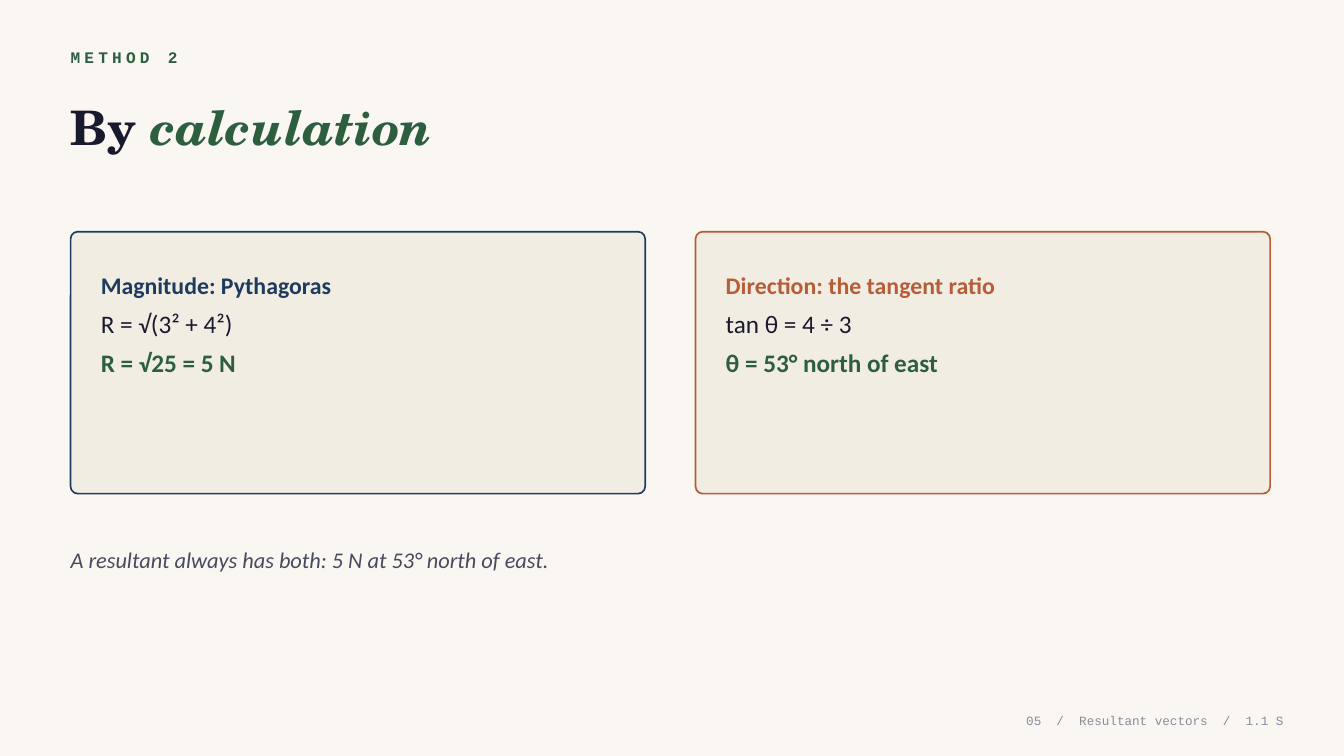
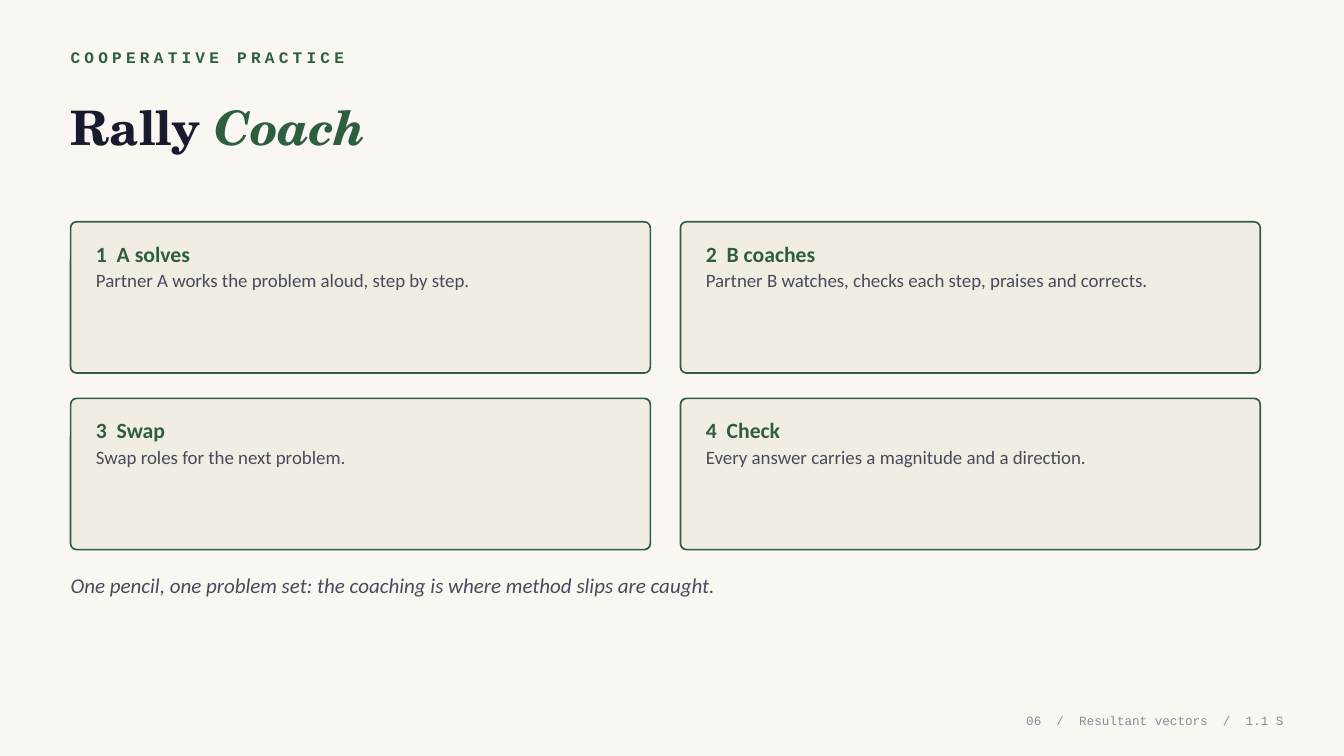
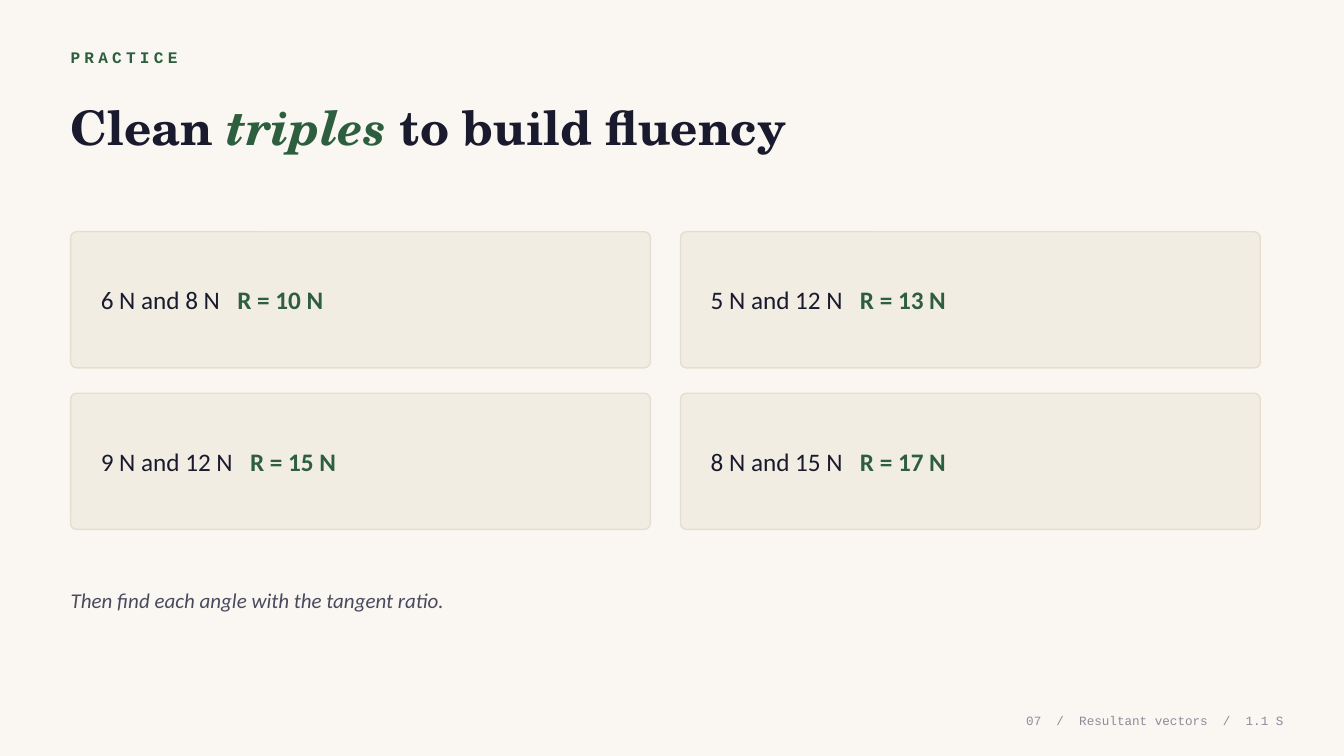
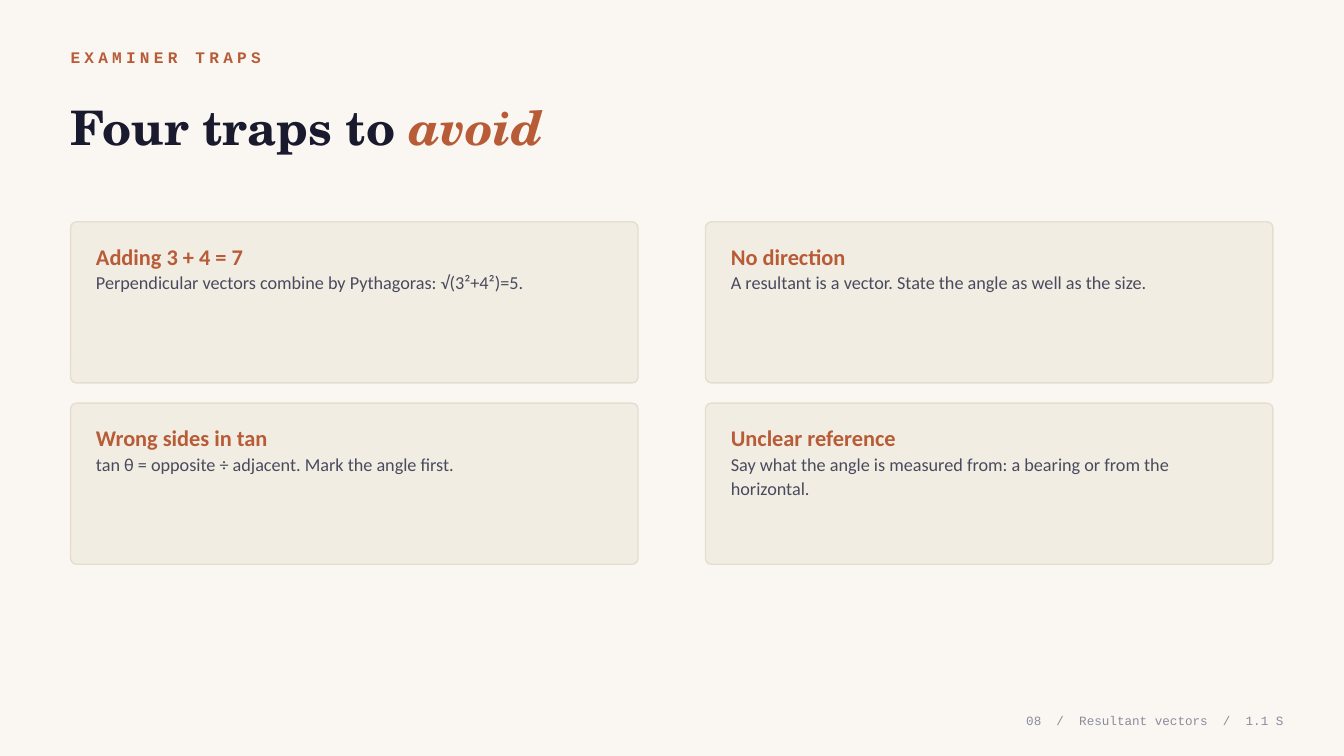
import dataclasses

import pptx
import pptx.dml.color
import pptx.enum.shapes
import pptx.enum.text
import pptx.presentation
import pptx.shapes.autoshape
import pptx.slide
import pptx.text.text
import pptx.util

Cm = pptx.util.Cm
Pt = pptx.util.Pt
Anchor = pptx.enum.text.MSO_ANCHOR
Align = pptx.enum.text.PP_ALIGN

PAPER = "FAF7F2"
CARD = "F2EDE3"
EDGE = "E5DDD0"
INK = "1A1A2E"
SLATE = "4A4A5E"
GREY = "8B8B9C"
GREEN = "2D5F3F"
NAVY = "1E3A5F"
RUST = "B85C38"

LEFT = 1.78
FULL_WIDTH = 30.3


@dataclasses.dataclass(frozen=True)
class Run:
    text: str
    size: float
    colour: str
    bold: bool = False
    italic: bool = False
    font: str = "Calibri"
    tracking: float = 0


Line = list[Run]


@dataclasses.dataclass(frozen=True)
class Box:
    left: float
    top: float
    width: float
    height: float


@dataclasses.dataclass(frozen=True)
class Grid:
    top: float
    width: float
    height: float
    column_gap: float
    row_gap: float
    inset_x: float
    inset_y: float
    radius: float = 0.15
    border_width: float = 1
    line_spacing: float = 1.1
    anchor: Anchor = Anchor.TOP
    columns: int = 2

    def cell(self, index: int) -> Box:
        row, column = divmod(index, self.columns)
        return Box(
            LEFT + column * (self.width + self.column_gap),
            self.top + row * (self.height + self.row_gap),
            self.width,
            self.height,
        )


@dataclasses.dataclass(frozen=True)
class Card:
    border: str
    lines: list[Line]


@dataclasses.dataclass(frozen=True)
class Page:
    number: int
    label: str
    accent: str
    title: list[tuple[str, bool]]
    grid: Grid
    cards: list[Card]
    note: str = ""
    note_top: float = 0
    note_size: float = 15


def rgb(value: str) -> pptx.dml.color.RGBColor:
    return pptx.dml.color.RGBColor.from_string(value)


def lengths(box: Box) -> list[pptx.util.Length]:
    return [Cm(value) for value in (box.left, box.top, box.width, box.height)]


def set_attributes(target: object, values: dict[str, object]) -> None:
    for name, value in values.items():
        setattr(target, name, value)


def add_run(paragraph: pptx.text.text._Paragraph, item: Run) -> None:
    run = paragraph.add_run()
    run.text = item.text
    set_attributes(run.font, {
        "name": item.font,
        "size": Pt(item.size),
        "bold": item.bold,
        "italic": item.italic,
    })
    run.font.color.rgb = rgb(item.colour)
    if item.tracking:
        run._r.get_or_add_rPr().set("spc", str(round(item.tracking * 100)))


def add_text(
    slide: pptx.slide.Slide,
    box: Box,
    lines: list[Line],
    anchor: Anchor = Anchor.MIDDLE,
    alignment: Align = Align.LEFT,
    line_spacing: float = 1.0,
) -> None:
    frame = slide.shapes.add_textbox(*lengths(box)).text_frame
    set_attributes(frame, {
        "word_wrap": True,
        "vertical_anchor": anchor,
        "margin_left": 0,
        "margin_right": 0,
        "margin_top": 0,
        "margin_bottom": 0,
    })
    for index, line in enumerate(lines):
        paragraph = frame.add_paragraph() if index else frame.paragraphs[0]
        set_attributes(paragraph, {"alignment": alignment, "line_spacing": line_spacing})
        for item in line:
            add_run(paragraph, item)


def add_card(slide: pptx.slide.Slide, grid: Grid, index: int, card: Card) -> None:
    box = grid.cell(index)
    shape = slide.shapes.add_shape(
        pptx.enum.shapes.MSO_SHAPE.ROUNDED_RECTANGLE, *lengths(box)
    )
    shape.shadow.inherit = False
    shape.adjustments[0] = grid.radius / grid.height
    shape.fill.solid()
    shape.fill.fore_color.rgb = rgb(CARD)
    shape.line.color.rgb = rgb(card.border)
    shape.line.width = Pt(grid.border_width)
    inner = Box(
        box.left + grid.inset_x,
        box.top + grid.inset_y,
        box.width - 2 * grid.inset_x,
        box.height - 2 * grid.inset_y,
    )
    add_text(slide, inner, card.lines, grid.anchor, line_spacing=grid.line_spacing)


def add_page(presentation: pptx.presentation.Presentation, page: Page) -> None:
    slide = presentation.slides.add_slide(presentation.slide_layouts[6])
    label = Run(page.label, 11.5, page.accent, bold=True, font="Courier New", tracking=3)
    add_text(slide, Box(LEFT, 1.07, FULL_WIDTH, 0.76), [[label]])
    title = [
        Run(text, 34, page.accent if stressed else INK, True, stressed, "TeX Gyre Schola")
        for text, stressed in page.title
    ]
    add_text(slide, Box(LEFT, 1.98, FULL_WIDTH, 2.41), [title])
    for index, card in enumerate(page.cards):
        add_card(slide, page.grid, index, card)
    if page.note:
        note = Run(page.note, page.note_size, SLATE, italic=True)
        add_text(slide, Box(LEFT, page.note_top, FULL_WIDTH, 1.27), [[note]])
    footer = Run(
        f"{page.number:02}  /  Resultant vectors  /  1.1 S", 9, GREY, font="Courier New"
    )
    add_text(slide, Box(22.94, 17.78, 9.4, 0.76), [[footer]], alignment=Align.RIGHT)


def method_card(colour: str, heading: str, working: str, answer: str) -> Card:
    return Card(colour, [
        [Run(heading, 17, colour, bold=True)],
        [Run(working, 18, INK)],
        [Run(answer, 18, GREEN, bold=True)],
    ])


def step_card(heading: str, body: str) -> Card:
    return Card(GREEN, [[Run(heading, 15.5, GREEN, bold=True)], [Run(body, 13.5, SLATE)]])


def triple_card(forces: str, resultant: str) -> Card:
    return Card(EDGE, [[Run(f"{forces}   ", 18, INK), Run(resultant, 18, GREEN, bold=True)]])


def trap_card(heading: str, body: str) -> Card:
    return Card(EDGE, [[Run(heading, 16, RUST, bold=True)], [Run(body, 13, SLATE)]])


METHOD_GRID = Grid(5.84, 14.48, 6.6, 1.27, 0, 0.76, 0.76, 0.18, 1.2, 1.3)
STEP_GRID = Grid(5.59, 14.61, 3.81, 0.76, 0.64, 0.64, 0.41, border_width=1.2)
TRIPLE_GRID = Grid(
    5.84, 14.61, 3.43, 0.76, 0.64, 0.76, 0.45, line_spacing=1.0, anchor=Anchor.MIDDLE
)
TRAP_GRID = Grid(5.59, 14.3, 4.06, 1.7, 0.51, 0.64, 0.46)

PAGES = [
    Page(
        5, "METHOD 2", GREEN, [("By ", False), ("calculation", True)], METHOD_GRID,
        [
            method_card(NAVY, "Magnitude: Pythagoras", "R = √(3² + 4²)", "R = √25 = 5 N"),
            method_card(
                RUST, "Direction: the tangent ratio", "tan θ = 4 ÷ 3", "θ = 53° north of east"
            ),
        ],
        "A resultant always has both: 5 N at 53° north of east.", 13.46, 16,
    ),
    Page(
        6, "COOPERATIVE PRACTICE", GREEN, [("Rally ", False), ("Coach", True)], STEP_GRID,
        [
            step_card("1  A solves", "Partner A works the problem aloud, step by step."),
            step_card(
                "2  B coaches", "Partner B watches, checks each step, praises and corrects."
            ),
            step_card("3  Swap", "Swap roles for the next problem."),
            step_card("4  Check", "Every answer carries a magnitude and a direction."),
        ],
        "One pencil, one problem set: the coaching is where method slips are caught.", 14.1,
    ),
    Page(
        7, "PRACTICE", GREEN,
        [("Clean ", False), ("triples", True), (" to build fluency", False)], TRIPLE_GRID,
        [
            triple_card("6 N and 8 N", "R = 10 N"),
            triple_card("5 N and 12 N", "R = 13 N"),
            triple_card("9 N and 12 N", "R = 15 N"),
            triple_card("8 N and 15 N", "R = 17 N"),
        ],
        "Then find each angle with the tangent ratio.", 14.48,
    ),
    Page(
        8, "EXAMINER TRAPS", RUST, [("Four traps to ", False), ("avoid", True)], TRAP_GRID,
        [
            trap_card(
                "Adding 3 + 4 = 7", "Perpendicular vectors combine by Pythagoras: √(3²+4²)=5."
            ),
            trap_card(
                "No direction", "A resultant is a vector. State the angle as well as the size."
            ),
            trap_card("Wrong sides in tan", "tan θ = opposite ÷ adjacent. Mark the angle first."),
            trap_card(
                "Unclear reference",
                "Say what the angle is measured from: a bearing or from the horizontal.",
            ),
        ],
    ),
]


def main() -> None:
    presentation = pptx.Presentation()
    set_attributes(presentation, {"slide_width": Cm(33.87), "slide_height": Cm(19.05)})
    background = presentation.slide_master.background.fill
    background.solid()
    background.fore_color.rgb = rgb(PAPER)
    for page in PAGES:
        add_page(presentation, page)
    presentation.save("out.pptx")


if __name__ == "__main__":
    main()
